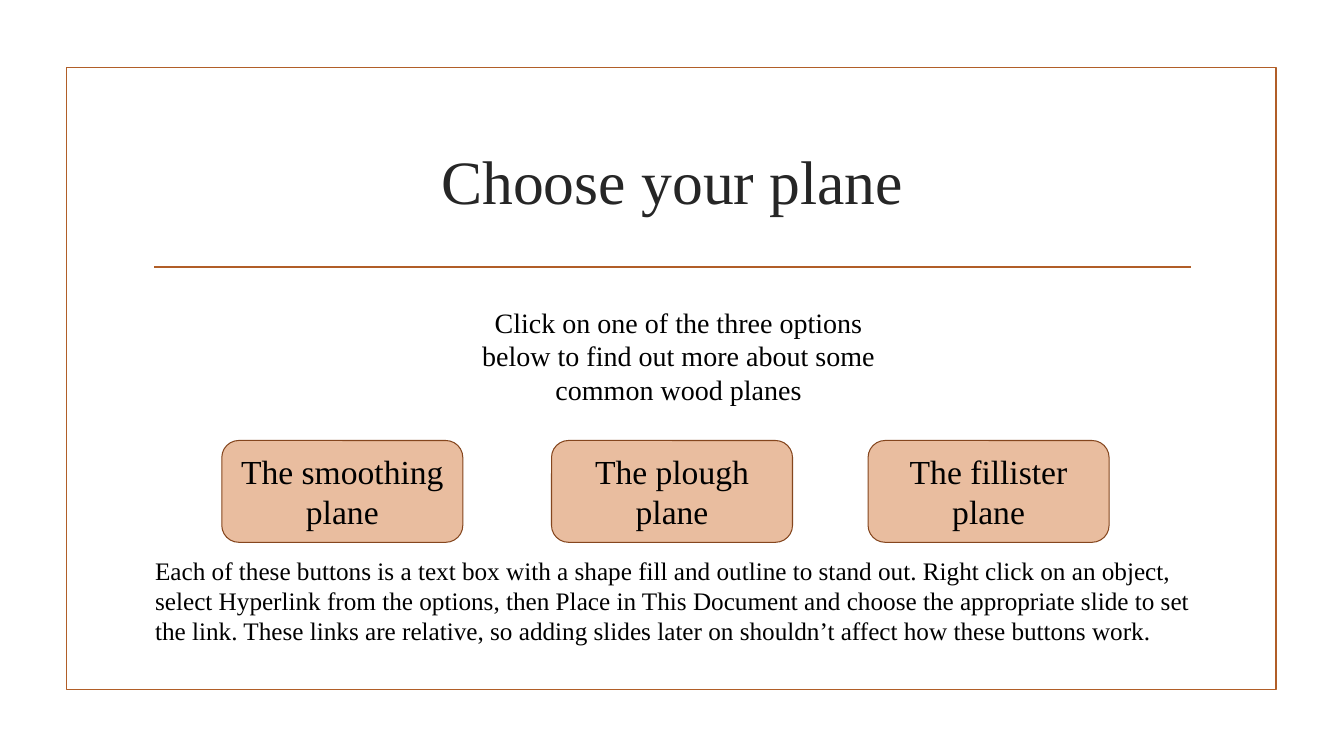
from pptx import Presentation
from pptx.dml.color import RGBColor
from pptx.enum.shapes import MSO_CONNECTOR, MSO_SHAPE
from pptx.enum.text import MSO_ANCHOR, MSO_AUTO_SIZE, PP_ALIGN
from pptx.oxml.ns import qn
from pptx.util import Inches, Pt
from lxml.etree import SubElement

RUST = RGBColor(0xB1, 0x5E, 0x28)
BROWN = RGBColor(0x85, 0x46, 0x1E)
PEACH = RGBColor(0xE9, 0xBD, 0x9F)
GREY = RGBColor(0x26, 0x26, 0x26)
BLACK = RGBColor(0, 0, 0)
FONT = "Times New Roman"

PROMPT = ("Click on one of the three options below to find out more "
          "about some common wood planes")
NOTE = ("Each of these buttons is a text box with a shape fill and outline "
        "to stand out. Right click on an object, select Hyperlink from the "
        "options, then Place in This Document and choose the appropriate "
        "slide to set the link. These links are relative, so adding slides "
        "later on shouldn’t affect how these buttons work.")
BUTTONS = [("The smoothing plane", 2.2),
           ("The plough plane", 5.47),
           ("The fillister plane", 8.61)]


def write(shape, text, size, align, color=BLACK):
    frame = shape.text_frame
    frame.text = text
    frame.word_wrap = True
    para = frame.paragraphs[0]
    para.alignment = align
    para.font.name = FONT
    para.font.size = Pt(size)
    para.font.color.rgb = color
    return frame


def add_frame(slide, x, y, w, h):
    """Draw the border and the rule below the title."""
    border = slide.shapes.add_shape(
        MSO_SHAPE.RECTANGLE, Inches(x), Inches(y), Inches(w), Inches(h))
    border.shadow.inherit = False
    border.fill.background()
    level = Inches(y + 1.98)
    rule = slide.shapes.add_connector(
        MSO_CONNECTOR.STRAIGHT,
        Inches(x + 0.87), level, Inches(x + w - 0.85), level)
    SubElement(rule._element.spPr, qn("a:effectLst"))
    for part in (border, rule):
        part.line.color.rgb = RUST
        part.line.width = Pt(1.25)
    # The effect list has to follow the line in the shape properties
    props = rule._element.spPr
    props.append(props.find(qn("a:effectLst")))


def add_title(slide, x, y, w, h):
    title = slide.shapes.title
    title.left, title.top = Inches(x), Inches(y)
    title.width, title.height = Inches(w), Inches(h)
    frame = write(title, "Choose your plane", 44, PP_ALIGN.CENTER, GREY)
    frame.vertical_anchor = MSO_ANCHOR.MIDDLE


def add_text(slide, text, size, align, x, y, w, h):
    box = slide.shapes.add_textbox(
        Inches(x), Inches(y), Inches(w), Inches(h))
    frame = write(box, text, size, align)
    frame.auto_size = MSO_AUTO_SIZE.SHAPE_TO_FIT_TEXT


def add_button(slide, text, x, y, w, h):
    button = slide.shapes.add_shape(
        MSO_SHAPE.ROUNDED_RECTANGLE,
        Inches(x), Inches(y), Inches(w), Inches(h))
    button.shadow.inherit = False
    button.fill.solid()
    button.fill.fore_color.rgb = PEACH
    button.line.color.rgb = BROWN
    button.line.width = Pt(0.75)
    frame = write(button, text, 24, PP_ALIGN.CENTER)
    frame.vertical_anchor = MSO_ANCHOR.TOP
    frame.auto_size = MSO_AUTO_SIZE.SHAPE_TO_FIT_TEXT


def main():
    deck = Presentation()
    deck.slide_width, deck.slide_height = Inches(13.33), Inches(7.5)
    slide = deck.slides.add_slide(deck.slide_layouts[5])
    add_frame(slide, 0.66, 0.67, 12, 6.17)
    add_title(slide, 1.42, 1.07, 10.5, 1.43)
    add_text(slide, PROMPT, 20, PP_ALIGN.CENTER, 4.59, 2.98, 4.28, 1.11)
    for text, x in BUTTONS:
        add_button(slide, text, x, 4.37, 2.39, 1.01)
    add_text(slide, NOTE, 18, PP_ALIGN.LEFT, 1.44, 5.46, 10.58, 1.01)
    deck.save("out.pptx")


if __name__ == "__main__":
    main()
